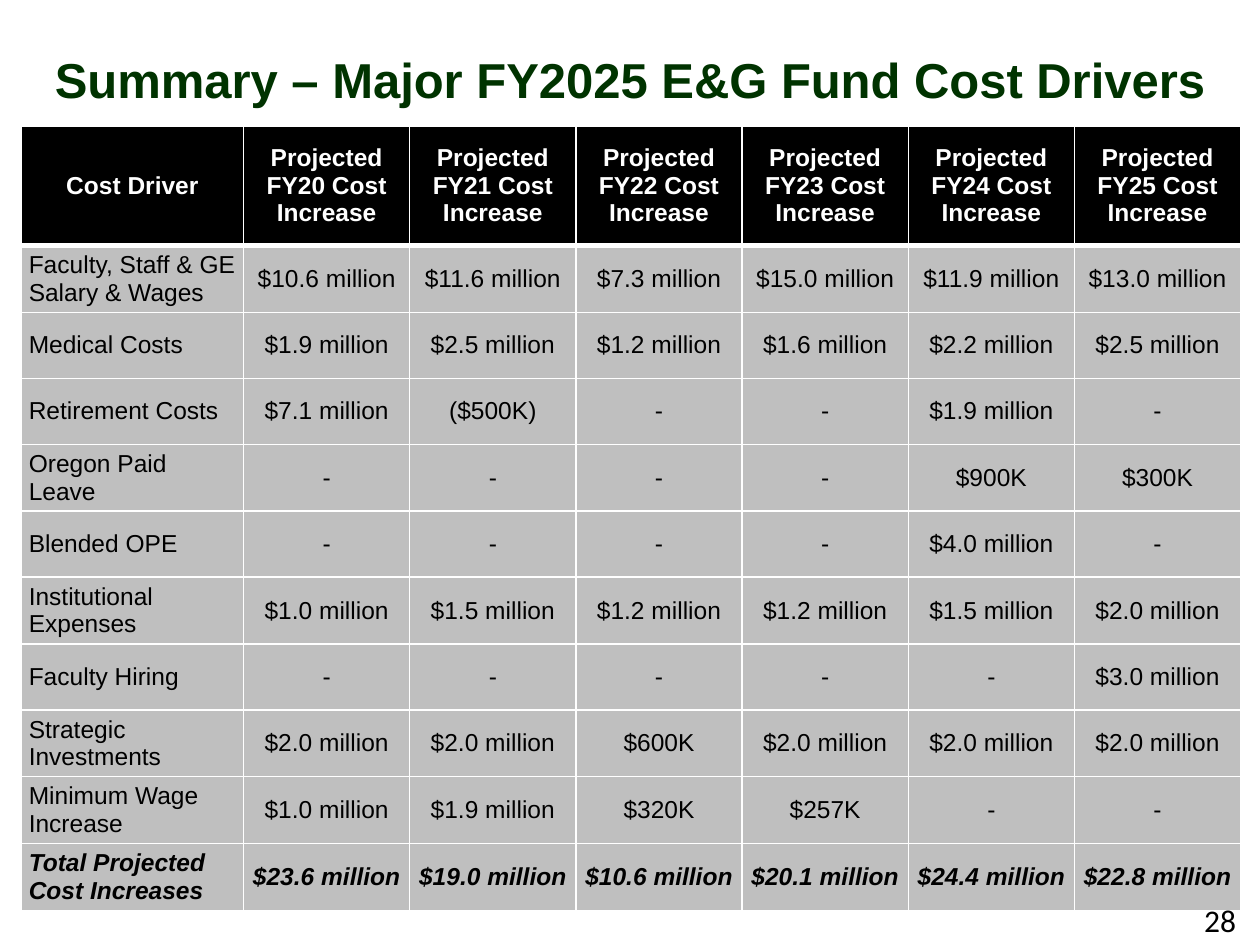
from lxml import etree
from pptx import Presentation
from pptx import util as u
from pptx.dml.color import RGBColor
from pptx.enum import text
from pptx.oxml import ns

MID = text.MSO_ANCHOR.MIDDLE
TOP = text.MSO_ANCHOR.TOP
LEFT, MIDST, RIGHT = text.PP_ALIGN.LEFT, text.PP_ALIGN.CENTER, text.PP_ALIGN.RIGHT

YEARS = range(20, 26)
HEAD = ["Cost Driver"] + [f"Projected FY{y} Cost Increase" for y in YEARS]
COSTS = [
    ["Faculty, Staff & GE Salary & Wages", "$10.6 million", "$11.6 million",
     "$7.3 million", "$15.0 million", "$11.9 million", "$13.0 million"],
    ["Medical Costs", "$1.9 million", "$2.5 million", "$1.2 million",
     "$1.6 million", "$2.2 million", "$2.5 million"],
    ["Retirement Costs", "$7.1 million", "($500K)", "-", "-", "$1.9 million", "-"],
    ["Oregon Paid Leave", "-", "-", "-", "-", "$900K", "$300K"],
    ["Blended OPE", "-", "-", "-", "-", "$4.0 million", "-"],
    ["Institutional Expenses", "$1.0 million", "$1.5 million", "$1.2 million",
     "$1.2 million", "$1.5 million", "$2.0 million"],
    ["Faculty Hiring", "-", "-", "-", "-", "-", "$3.0 million"],
    ["Strategic Investments", "$2.0 million", "$2.0 million", "$600K",
     "$2.0 million", "$2.0 million", "$2.0 million"],
    ["Minimum Wage Increase", "$1.0 million", "$1.9 million", "$320K", "$257K", "-", "-"],
]
TOTAL = ["Total Projected Cost Increases", "$23.6 million", "$19.0 million",
         "$10.6 million", "$20.1 million", "$24.4 million", "$22.8 million"]


def shade(code):
    return RGBColor.from_string(code)


class Deck:
    """Holds the style and the current slide."""
    face, green, black, white, grey = "Arial", "003300", "000000", "FFFFFF", "BFBFBF"

    def __init__(self):
        self.show = Presentation()
        self.show.slide_width, self.show.slide_height = u.Cm(25.4), u.Cm(19.05)
        self.slide = self.show.slides.add_slide(self.show.slide_layouts[6])

    def put(self, frame, words, size, tint, align, bold=False, slant=False, face=None):
        para = frame.paragraphs[0]
        para.text, para.alignment = words, align
        font = para.font
        font.name, font.size = face or self.face, u.Pt(size)
        font.bold, font.italic = bold, slant
        font.color.rgb = shade(tint)

    def label(self, box, words, size, tint, align, anchor, **style):
        frame = self.slide.shapes.add_textbox(*map(u.Cm, box)).text_frame
        frame.word_wrap, frame.vertical_anchor = True, anchor
        self.put(frame, words, size, tint, align, **style)

    def edge(self, cell, side, width):
        line = etree.SubElement(cell._tc.get_or_add_tcPr(), ns.qn(f"a:ln{side}"),
                                w=str(u.Pt(width)))
        fill = etree.SubElement(line, ns.qn("a:solidFill"))
        etree.SubElement(fill, ns.qn("a:srgbClr"), val=self.white)

    def table(self, left, top, cols, rows, data):
        grid = self.slide.shapes.add_table(
            len(rows), len(cols), *map(u.Cm, (left, top, sum(cols), sum(rows)))).table
        for col, width in zip(grid.columns, cols):
            col.width = u.Cm(width)
        last = len(rows) - 1
        for r, line in enumerate(data):
            grid.rows[r].height = u.Cm(rows[r])
            for c, words in enumerate(line):
                self.cell(grid.cell(r, c), words, r == 0, r == 1, r == last, c == 0)

    def cell(self, cell, words, head, first, total, name):
        # Borders go in ahead of the fill, as the schema asks
        for side, width in zip("LRTB", (1, 1, 3 if first else 1, 3 if head else 1)):
            self.edge(cell, side, width)
        cell.fill.solid()
        cell.fill.fore_color.rgb = shade(self.black if head else self.grey)
        cell.vertical_anchor = MID
        cell.margin_left = cell.margin_right = u.Cm(0.15)
        cell.margin_top = cell.margin_bottom = u.Cm(0.08)
        self.put(cell.text_frame, words, 14, self.white if head else self.black,
                 LEFT if name and not head else MIDST, bold=head or total, slant=total)


def main():
    deck = Deck()
    # Title
    deck.label((0, 0.43, 25.4, 2.31), "Summary – Major FY2025 E&G Fund Cost Drivers",
               28, deck.green, MIDST, MID, bold=True)
    # Cost table
    data = [HEAD, *COSTS, TOTAL]
    deck.table(0.43, 2.54, [4.48] + [3.35] * len(YEARS),
               [2.41] + [1.33] * (len(data) - 1), data)
    # Page number
    deck.label((19.25, 18.03, 5.92, 1.02), "28", 18, deck.black, RIGHT, TOP, face="Calibri")
    deck.show.save("out.pptx")


if __name__ == "__main__":
    main()
